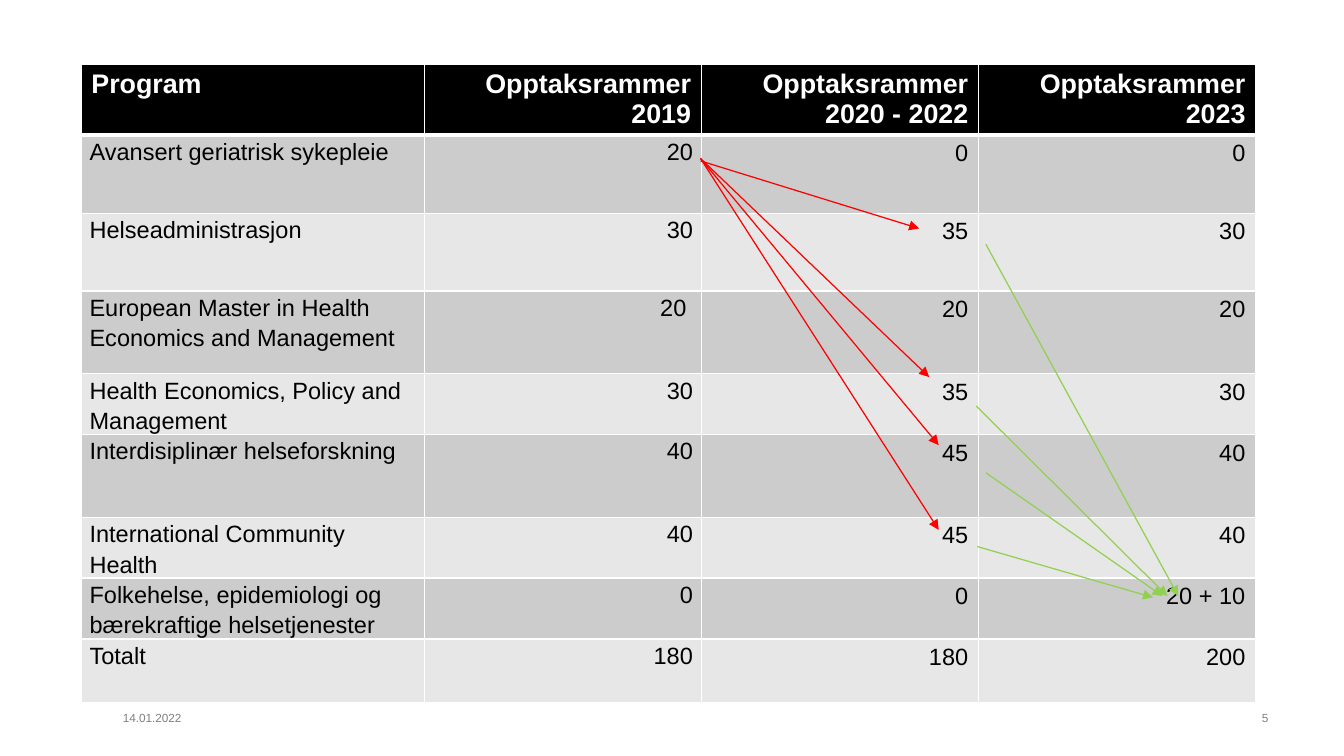
from lxml.etree import SubElement
from pptx import Presentation
from pptx.dml.color import RGBColor
from pptx.enum.shapes import MSO_CONNECTOR as Connector
from pptx.enum.text import PP_ALIGN as Align
from pptx.oxml.ns import qn
from pptx.util import Cm, Pt

COLORS = {
    "header": "000000", "dark_row": "CCCCCC", "light_row": "E7E7E7",
    "border": "FFFFFF", "header_text": "FFFFFF", "text": "000000",
    "footer": "808080", "moved_2020": "FF0000", "moved_2023": "92D050",
}
HEADINGS = ["Program", "Opptaksrammer 2019", "Opptaksrammer 2020 - 2022",
            "Opptaksrammer 2023"]
PROGRAMS = [
    ("Avansert geriatrisk sykepleie", "20", "0", "0"),
    ("Helseadministrasjon", "30", "35", "30"),
    ("European Master in Health Economics and Management", "20 ", "20", "20"),
    ("Health Economics, Policy and Management", "30", "35", "30"),
    ("Interdisiplinær helseforskning", "40", "45", "40"),
    ("International Community Health", "40", "45", "40"),
    ("Folkehelse, epidemiologi og bærekraftige helsetjenester",
     "0", "0", "20 + 10"),
    ("Totalt", "180", "180", "200"),
]
COLUMN_WIDTHS = [7.21, 5.82, 5.82, 5.82]
ROW_HEIGHTS = [1.49, 1.64, 1.63, 1.74, 1.27, 1.74, 1.27, 1.27, 1.34]
MOVES = {
    "moved_2020": [
        ((14.71, 3.38), (19.3, 4.8)),
        ((14.71, 3.33), (19.51, 7.92)),
        ((14.71, 3.33), (19.71, 9.35)),
        ((14.71, 3.33), (19.71, 11.13)),
    ],
    "moved_2023": [
        ((20.7, 5.13), (24.74, 12.52)),
        ((20.5, 8.53), (24.51, 12.52)),
        ((20.7, 9.93), (24.41, 12.52)),
        ((20.52, 11.48), (24.21, 12.55)),
    ],
}


def color(name):
    return RGBColor.from_string(COLORS[name])


def write(holder, text, size=14, fill="text", bold=False, align=Align.LEFT,
          line_spacing=None, space_after=None, margins=(0.22, 0.11)):
    """Fill a cell or a text frame with one formatted paragraph."""
    holder.margin_left = holder.margin_right = Cm(margins[0])
    holder.margin_top = holder.margin_bottom = Cm(margins[1])
    frame = getattr(holder, "text_frame", holder)
    frame.word_wrap = True
    para = frame.paragraphs[0]
    para.alignment = align
    if line_spacing:
        para.line_spacing = line_spacing
    if space_after:
        para.space_after = Pt(space_after)
    span = para.add_run()
    span.text = text
    span.font.name = "Arial"
    span.font.size = Pt(size)
    span.font.bold = bold
    span.font.color.rgb = color(fill)


def add_borders(cell, top=1, bottom=1):
    """Draw the cell's borders; call before setting its fill."""
    properties = cell._tc.get_or_add_tcPr()
    for side, width in (("L", 1), ("R", 1), ("T", top), ("B", bottom)):
        line = SubElement(properties, qn(f"a:ln{side}"), w=str(Pt(width)))
        solid = SubElement(line, qn("a:solidFill"))
        SubElement(solid, qn("a:srgbClr"), val=COLORS["border"])


def paint(cell, name):
    cell.fill.solid()
    cell.fill.fore_color.rgb = color(name)


def add_admission_table(page):
    table = page.shapes.add_table(
        len(ROW_HEIGHTS), len(COLUMN_WIDTHS), Cm(1.7), Cm(1.35),
        Cm(sum(COLUMN_WIDTHS)), Cm(sum(ROW_HEIGHTS))).table
    for column, width in zip(table.columns, COLUMN_WIDTHS):
        column.width = Cm(width)
    for row, height in zip(table.rows, ROW_HEIGHTS):
        row.height = Cm(height)

    for index, heading in enumerate(HEADINGS):
        cell = table.cell(0, index)
        add_borders(cell, bottom=3)
        paint(cell, "header")
        write(cell, heading, size=16, fill="header_text", bold=True,
              align=Align.RIGHT if index else Align.LEFT)

    tight = dict(line_spacing=1.15, space_after=10, margins=(0.18, 0))
    for number, values in enumerate(PROGRAMS, start=1):
        for index, value in enumerate(values):
            cell = table.cell(number, index)
            add_borders(cell, top=3 if number == 1 else 1)
            paint(cell, "dark_row" if number % 2 else "light_row")
            write(cell, value, align=Align.RIGHT if index else Align.LEFT,
                  **(tight if index < 2 else {}))


def add_footer(page, text, left, width, align=Align.LEFT):
    box = page.shapes.add_textbox(Cm(left), Cm(14.81), Cm(width), Cm(1.06))
    write(box.text_frame, text, size=7, fill="footer", align=align)


def add_arrow(page, start, end, name):
    points = [Cm(value) for value in (*start, *end)]
    arrow = page.shapes.add_connector(Connector.STRAIGHT, *points)
    arrow.line.color.rgb = color(name)
    arrow.line.width = Pt(0.75)
    SubElement(arrow.line._get_or_add_ln(), qn("a:tailEnd"), type="triangle")
    SubElement(arrow._element.spPr, qn("a:effectLst"))


def main():
    deck = Presentation()
    deck.slide_width, deck.slide_height = Cm(28.22), Cm(15.88)
    page = deck.slides.add_slide(deck.slide_layouts[6])
    add_admission_table(page)
    add_footer(page, "14.01.2022", 2.36, 5.87)
    add_footer(page, "5", 24.74, 2.11, align=Align.RIGHT)
    for name, arrows in MOVES.items():
        for start, end in arrows:
            add_arrow(page, start, end, name)
    deck.save("out.pptx")


if __name__ == "__main__":
    main()
